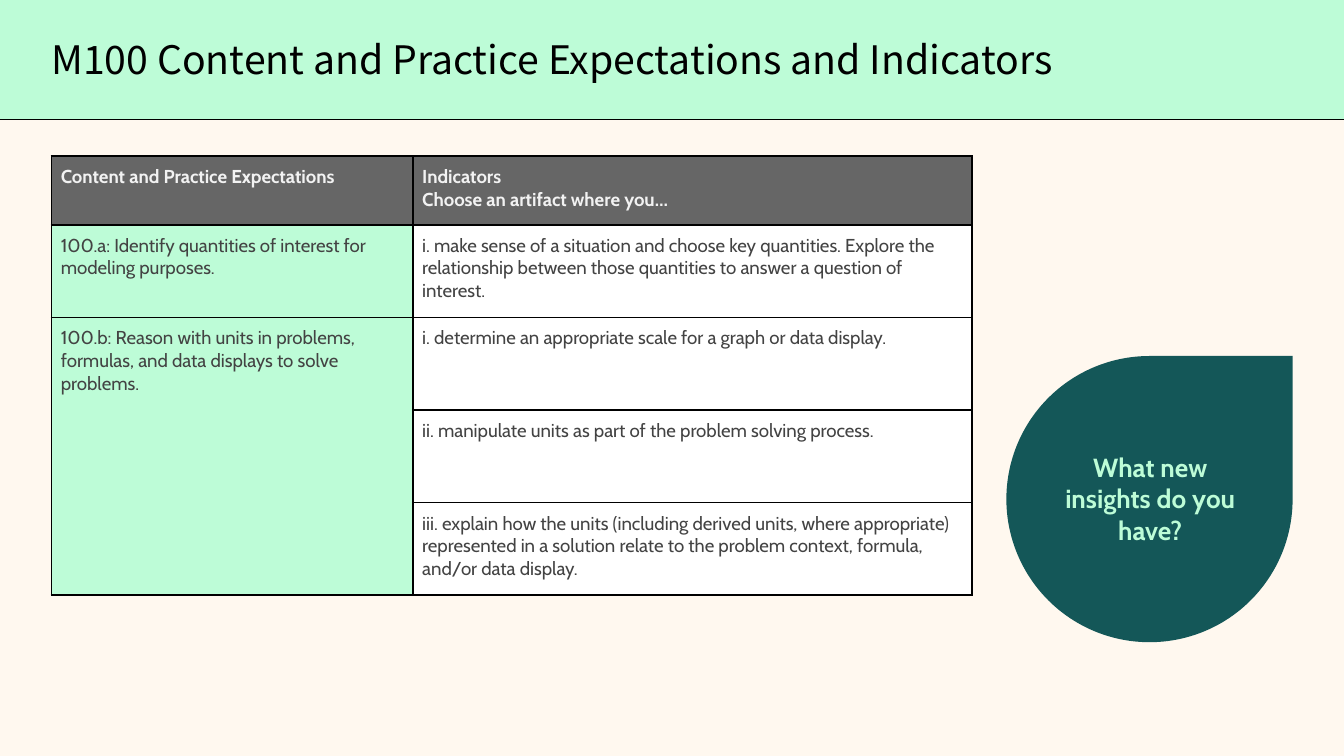
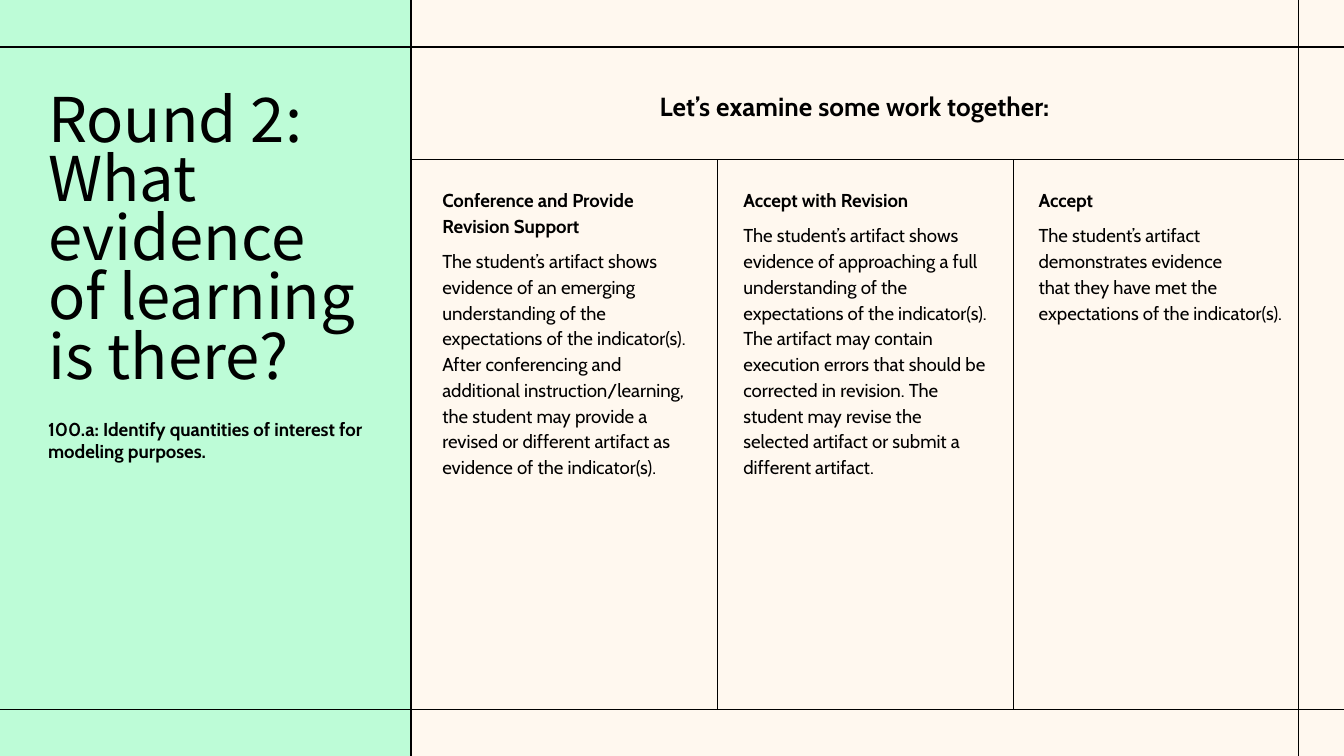
from lxml.etree import SubElement
from pptx import Presentation
from pptx.dml.color import RGBColor
from pptx.enum.shapes import MSO_CONNECTOR, MSO_SHAPE
from pptx.enum.text import MSO_ANCHOR, MSO_AUTO_SIZE, PP_ALIGN
from pptx.oxml import parse_xml
from pptx.oxml.ns import nsdecls, qn
from pptx.util import Cm, Pt

# Shared look
CREAM = RGBColor(0xFF, 0xF8, 0xEF)
MINT = RGBColor(0xBD, 0xFC, 0xD7)
TEAL = RGBColor(0x14, 0x57, 0x58)
BLACK = RGBColor(0, 0, 0)
WHITE = RGBColor(0xFF, 0xFF, 0xFF)
HEADER_GRAY = RGBColor(0x66, 0x66, 0x66)
HEADER_TEXT = RGBColor(0xF2, 0xF2, 0xF2)
CELL_TEXT = RGBColor(0x43, 0x43, 0x43)
TITLE_FONT, BODY_FONT = "Noto Sans CJK KR", "Cabin"
PAGE_WIDTH, PAGE_HEIGHT = 25.4, 14.29  # all lengths in cm

# Content of the expectations slide
EXPECTATIONS_TITLE = "M100 Content and Practice Expectations and Indicators"
EXPECTATION_A = "100.a: Identify quantities of interest for modeling purposes."
HEADER = ("Content and Practice Expectations", "Indicators\nChoose an artifact where you…")
EXPECTATIONS = [
    (EXPECTATION_A, [
        "i. make sense of a situation and choose key quantities. Explore the relationship "
        "between those quantities to answer a question of interest.",
    ]),
    ("100.b: Reason with units in problems, formulas, and data displays to solve problems.", [
        "i. determine an appropriate scale for a graph or data display.",
        "ii. manipulate units as part of the problem solving process.",
        "iii. explain how the units (including derived units, where appropriate) represented "
        "in a solution relate to the problem context, formula, and/or data display.",
    ]),
]
COLUMN_WIDTHS = (6.83, 10.57)
HEADER_HEIGHT, ROW_HEIGHT = 1.3, 1.75
QUESTION = "What new insights do you have?"

# Content of the evidence slide
EVIDENCE_TITLE = "Round 2:\nWhat evidence of learning is there?"
EVIDENCE_HEADING = "Let’s examine some work together:"
RATINGS = [  # left, height, name, description
    (8.36, 6.5, "Conference and Provide Revision Support",
     "The student’s artifact shows evidence of an emerging understanding of the expectations "
     "of the indicator(s). After conferencing and additional instruction/learning, the student "
     "may provide a revised or different artifact as evidence of the indicator(s)."),
    (14.05, 6.02, "Accept with Revision",
     "The student’s artifact shows evidence of approaching a full understanding of the "
     "expectations of the indicator(s). The artifact may contain execution errors that should "
     "be corrected in revision. The student may revise the selected artifact or submit a "
     "different artifact."),
    (19.63, 3.07, "Accept",
     "The student’s artifact demonstrates evidence \vthat they have met the expectations "
     "of the indicator(s)."),
]
RATING_TOP, RATING_WIDTH = 3.51, 4.62
SIDEBAR_WIDTH = 7.77
TOP_RULE, HEADING_RULE, BOTTOM_RULE = 0.89, 3.02, 13.41
RIGHT_RULE = 24.54
COLUMN_RULES = (13.56, 19.15)


def place(item, left, top, width, height):
    item.left, item.top, item.width, item.height = map(Cm, (left, top, width, height))


def write(frame, text, size, color, font=BODY_FONT, bold=False, align=PP_ALIGN.LEFT, spacing=None):
    frame.text = text
    for paragraph in frame.paragraphs:
        paragraph.alignment = align
        if spacing:
            paragraph.line_spacing = spacing
        for span in paragraph.runs:
            span.font.name, span.font.size, span.font.bold = font, Pt(size), bold
            span.font.color.rgb = color


def set_frame(frame):
    frame.word_wrap = True
    frame.auto_size = MSO_AUTO_SIZE.SHAPE_TO_FIT_TEXT
    frame.vertical_anchor = MSO_ANCHOR.TOP
    frame.margin_left = frame.margin_top = frame.margin_right = frame.margin_bottom = 0


def add_text(page, bounds, text, size, color=BLACK, **style):
    box = page.shapes.add_textbox(*map(Cm, bounds))
    set_frame(box.text_frame)
    write(box.text_frame, text, size, color, **style)
    return box


def add_block(page, preset, bounds, color):
    block = page.shapes.add_shape(preset, *map(Cm, bounds))
    block.shadow.inherit = False
    block.fill.solid()
    block.fill.fore_color.rgb = color
    block.line.fill.background()


def add_rule(page, left, top, right, bottom):
    rule = page.shapes.add_connector(MSO_CONNECTOR.STRAIGHT, *map(Cm, (left, top, right, bottom)))
    rule.line.color.rgb = BLACK
    rule.line.width = Pt(0.75)
    SubElement(rule.element.spPr, qn("a:effectLst"))


def add_row_rule(page, top):
    add_rule(page, 0, top, PAGE_WIDTH, top)


def add_column_rule(page, left, top=0, bottom=PAGE_HEIGHT):
    add_rule(page, left, top, left, bottom)


def add_page(deck):
    page = deck.slides.add_slide(deck.slide_layouts[5])
    page.background.fill.solid()
    page.background.fill.fore_color.rgb = CREAM
    return page


def add_title(page, bounds, text, size, spacing):
    title = page.shapes.title
    page.shapes.element.append(title.element)  # bring in front of the band
    place(title, *bounds)
    set_frame(title.text_frame)
    write(title.text_frame, text, size, BLACK, font=TITLE_FONT, spacing=spacing)


def fill_cell(cell, text, fill, color, bold=False):
    cell.margin_left = cell.margin_right = cell.margin_top = cell.margin_bottom = Cm(0.18)
    write(cell.text_frame, text, 10, color, bold=bold)


def paint_cell(cell, color):
    cell.fill.solid()
    cell.fill.fore_color.rgb = color
    for position, side in enumerate(("lnL", "lnR", "lnT", "lnB")):
        border = parse_xml(
            f'<a:{side} {nsdecls("a")} w="{Pt(1)}"><a:solidFill>'
            f'<a:srgbClr val="{BLACK}"/></a:solidFill></a:{side}>')
        cell._tc.get_or_add_tcPr().insert(position, border)


def add_expectations_table(page):
    row_count = 1 + sum(len(indicators) for _, indicators in EXPECTATIONS)
    frame = page.shapes.add_table(
        row_count, 2, Cm(0.97), Cm(2.95), Cm(sum(COLUMN_WIDTHS)),
        Cm(HEADER_HEIGHT + ROW_HEIGHT * (row_count - 1)))
    table = frame.table
    table.first_row = table.horz_banding = False
    for column, width in zip(table.columns, COLUMN_WIDTHS):
        column.width = Cm(width)
    for number, row in enumerate(table.rows):
        row.height = Cm(ROW_HEIGHT if number else HEADER_HEIGHT)
        for cell, color in zip(row.cells, (MINT, WHITE) if number else (HEADER_GRAY,) * 2):
            paint_cell(cell, color)

    for cell, text in zip(table.rows[0].cells, HEADER):
        fill_cell(cell, text, HEADER_GRAY, HEADER_TEXT, bold=True)
    first = 1
    for expectation, indicators in EXPECTATIONS:
        last = first + len(indicators) - 1
        if last > first:
            table.cell(first, 0).merge(table.cell(last, 0))
        fill_cell(table.cell(first, 0), expectation, MINT, CELL_TEXT)
        for number, indicator in enumerate(indicators, first):
            fill_cell(table.cell(number, 1), indicator, WHITE, CELL_TEXT)
        first = last + 1


def build_expectations(deck):
    page = add_page(deck)
    # Title band
    band_height = 2.26
    add_block(page, MSO_SHAPE.RECTANGLE, (0, 0, PAGE_WIDTH, band_height), MINT)
    add_title(page, (0.97, 0.76, 23.67, 0.81), EXPECTATIONS_TITLE, 21, 0.9)
    add_row_rule(page, band_height)
    # Question in the drop
    add_block(page, MSO_SHAPE.TEAR, (19.02, 6.73, 5.41, 5.41), TEAL)
    add_text(page, (19.81, 8.53, 3.86, 1.8), QUESTION, 14, MINT, bold=True, align=PP_ALIGN.CENTER)
    add_expectations_table(page)


def build_evidence(deck):
    page = add_page(deck)
    # Rules behind the sidebar, then the sidebar and the rules across it
    add_row_rule(page, HEADING_RULE)
    add_column_rule(page, RIGHT_RULE)
    add_block(page, MSO_SHAPE.RECTANGLE, (0, 0, SIDEBAR_WIDTH, PAGE_HEIGHT), MINT)
    for top in (TOP_RULE, BOTTOM_RULE):
        add_row_rule(page, top)
    add_column_rule(page, SIDEBAR_WIDTH)
    for left in COLUMN_RULES:
        add_column_rule(page, left, HEADING_RULE, BOTTOM_RULE)
    # Sidebar text and heading
    add_title(page, (0.91, 1.8, 6.02, 5.64), EVIDENCE_TITLE, 33, 0.8)
    add_text(page, (0.91, 7.9, 6.02, 0.86), EXPECTATION_A, 10, bold=True)
    add_text(page, (8.66, 1.7, 14.99, 0.61), EVIDENCE_HEADING, 14, bold=True,
             align=PP_ALIGN.CENTER)
    # Rating columns
    for left, height, name, description in RATINGS:
        box = add_text(page, (left, RATING_TOP, RATING_WIDTH, height),
                       f"{name}\n{description}", 10, spacing=1.15)
        heading, body = box.text_frame.paragraphs
        heading.runs[0].font.bold = True
        body.space_before = body.space_after = Pt(5)


def main():
    deck = Presentation()
    deck.slide_width, deck.slide_height = Cm(PAGE_WIDTH), Cm(PAGE_HEIGHT)
    build_expectations(deck)
    build_evidence(deck)
    deck.save("out.pptx")


if __name__ == "__main__":
    main()
